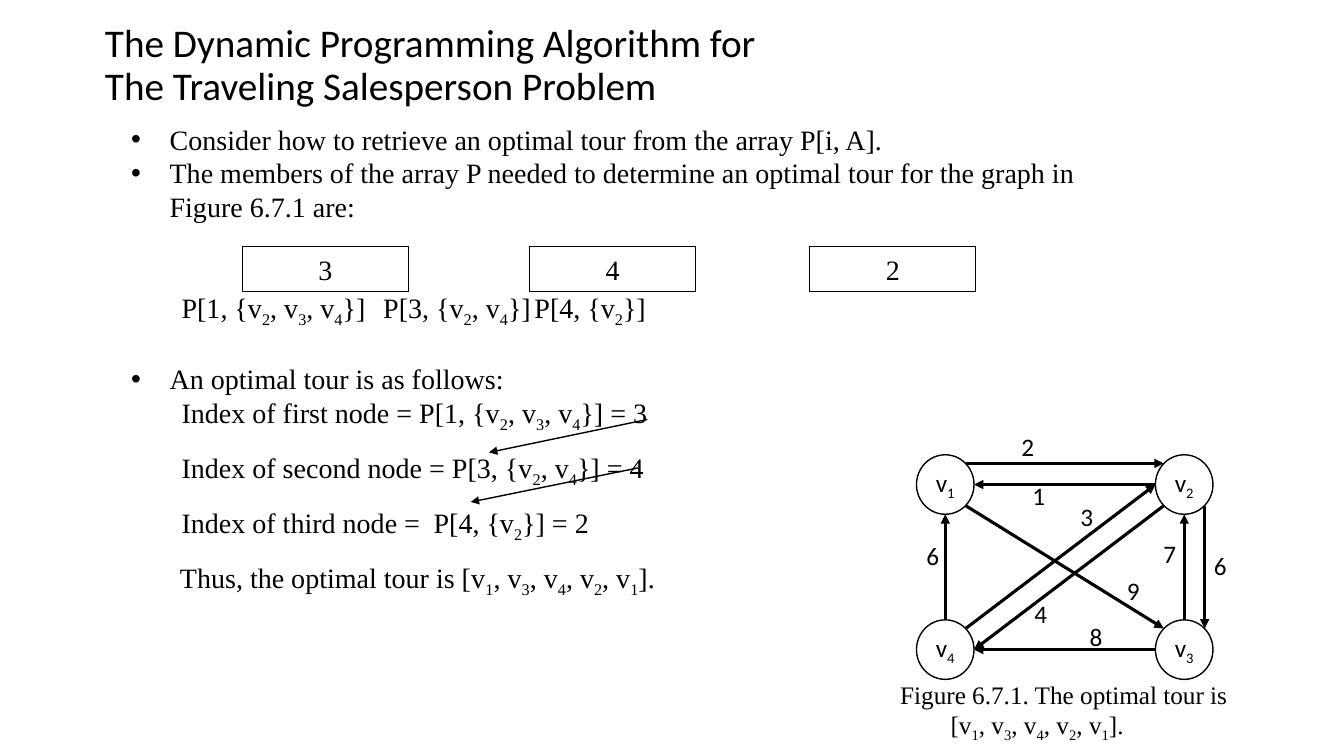
from lxml.etree import SubElement as Sub
from pptx import Presentation
from pptx.dml.color import RGBColor
from pptx.enum.shapes import MSO_CONNECTOR as Link, MSO_SHAPE as Form
from pptx.enum.text import MSO_ANCHOR as Anchor, MSO_AUTO_SIZE as Fit, PP_ALIGN as Align
from pptx.oxml.ns import qn
from pptx.util import Cm, Pt

BLACK = RGBColor(0, 0, 0)
WHITE = RGBColor(255, 255, 255)
SERIF = "Times New Roman"
SANS = "Calibri"


def write(para, text, size=20, font=SERIF, align=Align.LEFT, before=0, after=0, line=1.0):
    """Fill a paragraph; the character after each "_" is a subscript."""
    para.alignment = align
    para.line_spacing = line
    para.space_before, para.space_after = Pt(before), Pt(after)

    def add(part, sub=False):
        run = para.add_run()
        run.text = part
        run.font.size, run.font.name = Pt(size), font
        run.font.color.rgb = BLACK
        if sub:
            run.font._element.set("baseline", "-25000")

    for row, chunk in enumerate(text.split("\n")):
        if row:
            para.add_line_break()
        head, *tails = chunk.split("_")
        add(head)
        for tail in tails:
            add(tail[0], sub=True)
            if tail[1:]:
                add(tail[1:])


def indent(para, left=0, hang=0, bullet=False, tabs=()):
    """Set indents, bullet and tab stops of a body paragraph."""
    props = para._p.get_or_add_pPr()
    props.set("marL", str(Cm(left)))
    props.set("indent", str(-Cm(hang)))
    if bullet:
        Sub(props, qn("a:buChar"), char="•")
    else:
        Sub(props, qn("a:buNone"))
    if tabs:
        stops = Sub(props, qn("a:tabLst"))
        for tab in tabs:
            Sub(stops, qn("a:tab"), pos=str(Cm(tab)), algn="l")


class Board:
    """The current slide and its drawing style."""

    def __init__(self, deck):
        self.slide = deck.slides.add_slide(deck.slide_layouts[1])
        self.shapes = self.slide.shapes

    def place(self, index, x, y, w, h):
        holder = self.slide.placeholders[index]
        holder.left, holder.top, holder.width, holder.height = map(Cm, (x, y, w, h))
        frame = holder.text_frame
        frame.word_wrap, frame.auto_size = True, Fit.NONE
        frame.vertical_anchor = Anchor.TOP
        return frame

    def shape(self, form, text, x, y, w, h, width=1.0, fill=None, **style):
        item = self.shapes.add_shape(form, *map(Cm, (x, y, w, h)))
        item.shadow.inherit = False
        if fill is None:
            item.fill.background()
        else:
            item.fill.solid()
            item.fill.fore_color.rgb = fill
        item.line.color.rgb, item.line.width = BLACK, Pt(width)
        frame = item.text_frame
        frame.vertical_anchor = Anchor.MIDDLE
        write(frame.paragraphs[0], text, align=Align.CENTER, **style)

    def label(self, text, x, y, w, h, **style):
        frame = self.shapes.add_textbox(*map(Cm, (x, y, w, h))).text_frame
        frame.word_wrap = True
        write(frame.paragraphs[0], text, size=18, **style)

    def arrow(self, start, end, width):
        item = self.shapes.add_connector(Link.STRAIGHT, *map(Cm, start + end))
        item.line.color.rgb, item.line.width = BLACK, Pt(width)
        Sub(item.line._get_or_add_ln(), qn("a:tailEnd"), type="triangle")
        Sub(item._element.spPr, qn("a:effectLst"))


# Node size, node corners and compass points on a node's rim
NODE_W, NODE_H = 1.45, 1.5
NODES = {"v_1": (23.09, 11.46), "v_2": (29.11, 11.46),
         "v_4": (23.09, 15.62), "v_3": (29.11, 15.62)}
DIAG = 0.71
RIM = {"N": (0, -1), "S": (0, 1), "W": (-1, 0), "E": (1, 0),
       "NE": (DIAG, -DIAG), "NW": (-DIAG, -DIAG),
       "SE": (DIAG, DIAG), "SW": (-DIAG, DIAG)}

# Start, its side, end, its side, weight and place of the weight
EDGES = [
    ("v_1", "NE", "v_2", "NW", "2", 25.48, 10.74),
    ("v_2", "W", "v_1", "E", "1", 25.76, 11.99),
    ("v_4", "N", "v_1", "S", "6", 23.09, 13.49),
    ("v_4", "NE", "v_2", "W", "3", 26.97, 12.52),
    ("v_2", "SW", "v_4", "E", "4", 25.81, 14.94),
    ("v_3", "N", "v_2", "S", "7", 29.06, 13.44),
    ("v_2", "SE", "v_3", "NE", "6", 30.33, 13.74),
    ("v_3", "W", "v_4", "E", "8", 27.2, 15.52),
    ("v_1", "SE", "v_3", "NW", "9", 28.14, 14.38),
]

# Body text with its indents and spacing
POINT = dict(left=0.97, hang=0.97, bullet=True)
STEP = dict(left=1.27)
LINES = [
    ("Consider how to retrieve an optimal tour from the array P[i, A].", POINT, {}),
    ("The members of the array P needed to determine an optimal tour "
     "for the graph in Figure 6.7.1 are:", POINT, {}),
    ("\tP[1, {v_2, v_3, v_4}]\tP[3, {v_2, v_4}]\tP[4, {v_2}]",
     dict(tabs=(2.54, 10.16, 17.96)), dict(before=48)),
    ("An optimal tour is as follows:", POINT, dict(before=24)),
    ("Index of first node = P[1, {v_2, v_3, v_4}] = 3", STEP, dict(after=12)),
    ("Index of second node = P[3, {v_2, v_4}] = 4", STEP, dict(after=12)),
    ("Index of third node = \tP[4, {v_2}] = 2", STEP, dict(after=12)),
    ("Thus, the optimal tour is [v_1, v_3, v_4, v_2, v_1].", dict(left=1.23), {}),
]


def spot(node, side):
    (x, y), (dx, dy) = NODES[node], RIM[side]
    return x + NODE_W / 2 * (1 + dx), y + NODE_H / 2 * (1 + dy)


def main():
    deck = Presentation()
    deck.slide_width, deck.slide_height = Cm(33.86), Cm(19.05)
    board = Board(deck)

    # Title
    title = board.place(0, 2.39, 0.48, 23.5, 2.84)
    write(title.paragraphs[0],
          "The Dynamic Programming Algorithm for\nThe Traveling Salesperson Problem",
          size=28, font=SANS, line=0.9)

    # Body
    body = board.place(1, 3.05, 2.95, 26.04, 13.51)
    for row, (text, layout, style) in enumerate(LINES):
        para = body.add_paragraph() if row else body.paragraphs[0]
        write(para, text, **style)
        indent(para, **layout)

    # Graph
    for name, (x, y) in NODES.items():
        board.shape(Form.OVAL, name, x, y, NODE_W, NODE_H, fill=WHITE, size=18, font=SANS)
    for start, out, end, into, weight, x, y in EDGES:
        board.arrow(spot(start, out), spot(end, into), 2.25)
        board.label(weight, x, y, 1.45, 1.02, font=SANS)
    board.label("Figure 6.7.1. The optimal tour is\n\t[v_1, v_3, v_4, v_2, v_1].",
                22.43, 16.99, 9.07, 1.8)

    # Array cells
    for value, x in (("3", 6.1), ("4", 13.34), ("2", 20.4)):
        board.shape(Form.RECTANGLE, value, x, 6.22, 4.19, 1.12, width=0.75)

    # Arrows from each index to the next lookup
    board.arrow((16.31, 10.57), (12.32, 11.4), 1)
    board.arrow((16.08, 11.79), (11.86, 12.65), 1)

    deck.save("out.pptx")


if __name__ == "__main__":
    main()
